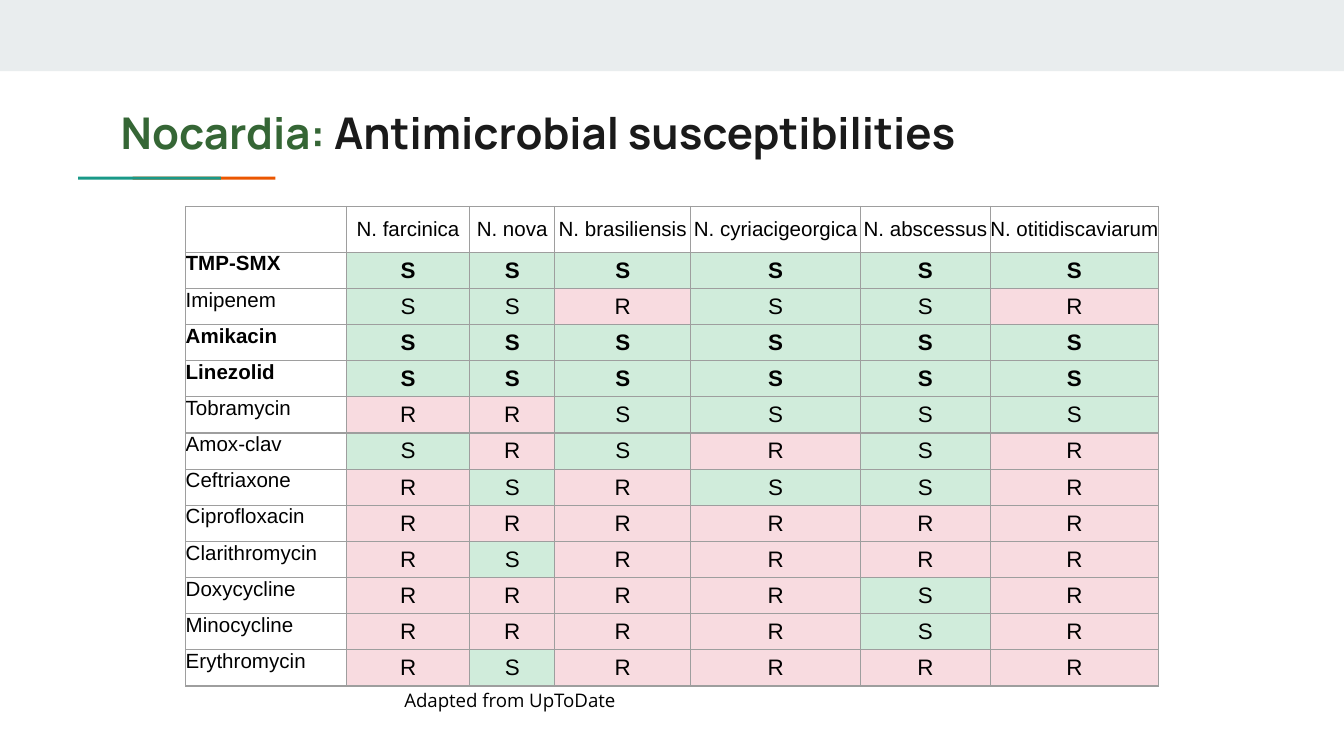
"""Build the Nocardia antimicrobial susceptibility slide."""
from dataclasses import dataclass

from lxml import etree
from pptx import Presentation
from pptx.dml.color import RGBColor
from pptx.enum.shapes import MSO_SHAPE
from pptx.enum.text import MSO_ANCHOR, PP_ALIGN
from pptx.oxml.ns import qn
from pptx.util import Pt

RECTANGLE = MSO_SHAPE.RECTANGLE
TOP, MIDDLE = MSO_ANCHOR.TOP, MSO_ANCHOR.MIDDLE
LEFT, CENTER = PP_ALIGN.LEFT, PP_ALIGN.CENTER


@dataclass(frozen=True)
class Theme:
    band: str = "E9EDEE"
    teal: str = "1A9988"
    orange: str = "EB5600"
    green: str = "356635"
    ink: str = "1A1A1A"
    black: str = "000000"
    grid: str = "9E9E9E"
    susceptible: str = "14A44D"
    resistant: str = "DC4C64"
    tint: int = 20
    grid_width: float = 0.75
    title_font: str = "Manrope"
    table_font: str = "Arial"
    caption_font: str = "Open Sans"
    title_size: float = 23.4
    label_size: float = 11
    result_size: float = 12
    caption_size: float = 10


SPECIES = ["N. farcinica", "N. nova", "N. brasiliensis", "N. cyriacigeorgica",
           "N. abscessus", "N. otitidiscaviarum"]
SUSCEPTIBILITIES = {
    "TMP-SMX": "SSSSSS",
    "Imipenem": "SSRSSR",
    "Amikacin": "SSSSSS",
    "Linezolid": "SSSSSS",
    "Tobramycin": "RRSSSS",
    "Amox-clav": "SRSRSR",
    "Ceftriaxone": "RSRSSR",
    "Ciprofloxacin": "RRRRRR",
    "Clarithromycin": "RSRRRR",
    "Doxycycline": "RRRRSR",
    "Minocycline": "RRRRSR",
    "Erythromycin": "RSRRRR",
}
COLUMN_WIDTHS = [86.1, 66.1, 45.5, 72.9, 91, 69.5, 90.2]
HEADER_HEIGHT, ROW_HEIGHT = 24.6, 19.38


class SlideBuilder:
    def __init__(self, page, theme):
        self.page = page
        self.theme = theme

    def bar(self, left, top, width, height, color):
        shape = self.page.shapes.add_shape(
            RECTANGLE, Pt(left), Pt(top), Pt(width), Pt(height))
        shape.shadow.inherit = False
        shape.fill.solid()
        shape.fill.fore_color.rgb = RGBColor.from_string(color)
        shape.line.fill.background()

    def style(self, font, name, size, color, bold=False):
        font.name = name
        font.size = Pt(size)
        font.bold = bold
        font.color.rgb = RGBColor.from_string(color)

    def text(self, left, top, width, height, spans, name, size, bold=False):
        box = self.page.shapes.add_textbox(Pt(left), Pt(top), Pt(width), Pt(height))
        frame = box.text_frame
        frame.word_wrap = True
        frame.margin_left = frame.margin_right = Pt(7.2)
        frame.margin_top = frame.margin_bottom = Pt(7.2)
        for words, color in spans:
            span = frame.paragraphs[0].add_run()
            span.text = words
            self.style(span.font, name, size, color, bold)

    def borders(self, cell):
        properties = cell._tc.get_or_add_tcPr()
        for side in ("a:lnL", "a:lnR", "a:lnT", "a:lnB"):
            line = etree.SubElement(
                properties, qn(side), w=str(Pt(self.theme.grid_width)))
            fill = etree.SubElement(line, qn("a:solidFill"))
            etree.SubElement(fill, qn("a:srgbClr"), val=self.theme.grid)

    def cell(self, cell, words, size, align, anchor, bold=False, color=None):
        cell.margin_left = cell.margin_right = 0
        cell.margin_top = cell.margin_bottom = 0
        cell.vertical_anchor = anchor
        cell.text_frame.text = words
        para = cell.text_frame.paragraphs[0]
        para.alignment = align
        self.style(para.font, self.theme.table_font, size, self.theme.black, bold)
        for span in para.runs:
            self.style(span.font, self.theme.table_font, size, self.theme.black, bold)
        self.borders(cell)
        if color is None:
            cell.fill.background()
            return
        cell.fill.solid()
        cell.fill.fore_color.rgb = RGBColor.from_string(color)
        shade = cell._tc.tcPr.find(qn("a:solidFill")).find(qn("a:srgbClr"))
        etree.SubElement(shade, qn("a:alpha"), val=str(self.theme.tint * 1000))

    def susceptibility_table(self, left, top):
        theme = self.theme
        row_heights = [HEADER_HEIGHT] + [ROW_HEIGHT] * len(SUSCEPTIBILITIES)
        table = self.page.shapes.add_table(
            len(row_heights), len(COLUMN_WIDTHS), Pt(left), Pt(top),
            Pt(sum(COLUMN_WIDTHS)), Pt(sum(row_heights))).table
        table.first_row = table.horz_banding = False
        for column, width in zip(table.columns, COLUMN_WIDTHS):
            column.width = Pt(width)
        for row, height in zip(table.rows, row_heights):
            row.height = Pt(height)
        for column, species in enumerate([""] + SPECIES):
            self.cell(table.cell(0, column), species, theme.label_size, CENTER, MIDDLE)
        colors = {"S": theme.susceptible, "R": theme.resistant}
        for row, (drug, results) in enumerate(SUSCEPTIBILITIES.items(), 1):
            bold = "R" not in results
            self.cell(table.cell(row, 0), drug, theme.label_size, LEFT, TOP, bold)
            for column, result in enumerate(results, 1):
                self.cell(table.cell(row, column), result, theme.result_size,
                          CENTER, MIDDLE, bold, colors[result])


def main():
    deck = Presentation()
    deck.slide_width, deck.slide_height = Pt(720), Pt(405)
    theme = Theme()
    builder = SlideBuilder(deck.slides.add_slide(deck.slide_layouts[6]), theme)
    builder.bar(0, 0, 720, 38.2, theme.band)
    builder.bar(71, 94.7, 76.5, 1.6, theme.orange)
    builder.bar(41.8, 94.7, 76.5, 1.6, theme.teal)
    builder.text(57.6, 49.7, 605.5, 42.5,
                 [("Nocardia:", theme.green),
                  (" Antimicrobial susceptibilities", theme.ink)],
                 theme.title_font, theme.title_size, True)
    builder.susceptibility_table(99.5, 110.6)
    builder.text(209.5, 362.9, 350, 26.6, [("Adapted from UpToDate", theme.black)],
                 theme.caption_font, theme.caption_size)
    deck.save("out.pptx")


if __name__ == "__main__":
    main()
